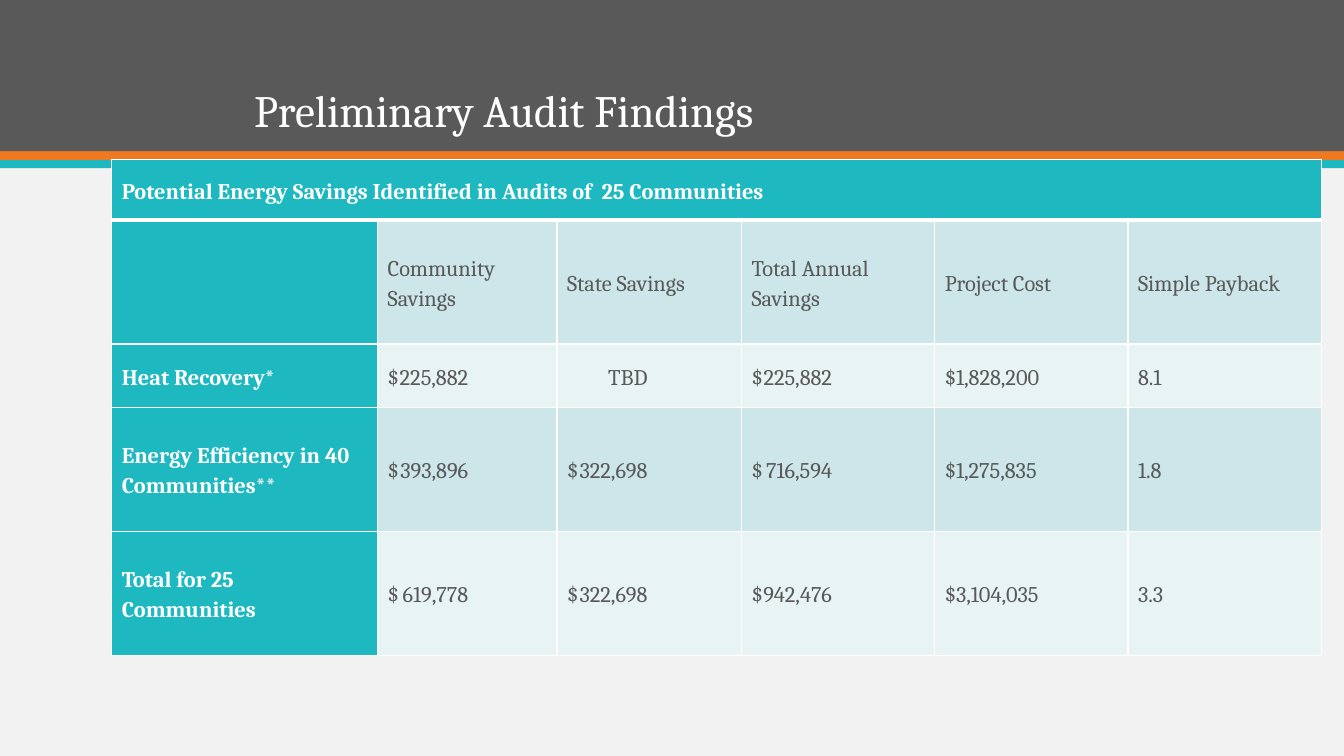
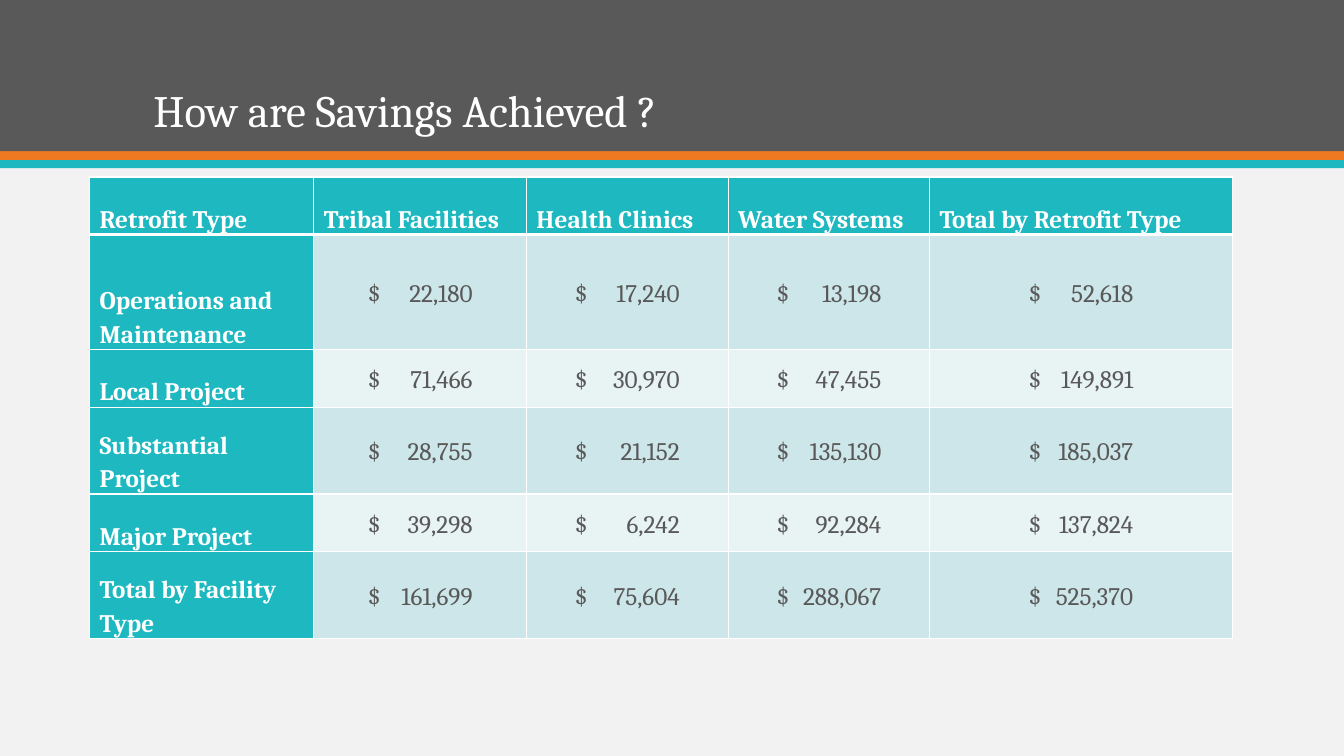
"""Build two slides with tables of energy audit savings."""
import lxml.etree
import pptx
import pptx.dml.color
import pptx.enum.shapes
import pptx.enum.text
import pptx.oxml.ns
import pptx.util

Cm = pptx.util.Cm
Pt = pptx.util.Pt
qn = pptx.oxml.ns.qn
TOP = pptx.enum.text.MSO_ANCHOR.TOP
MIDDLE = pptx.enum.text.MSO_ANCHOR.MIDDLE
BOTTOM = pptx.enum.text.MSO_ANCHOR.BOTTOM
LEFT = pptx.enum.text.PP_ALIGN.LEFT

WHITE, PAPER, GREY = "FFFFFF", "F2F2F2", "595959"
ORANGE, TEAL = "EF7920", "1EB8C1"
STRIPES = ["E8F3F4", "CDE6E9"]
CELL_MARGINS = {"margin_left": Cm(0.25), "margin_right": Cm(0.25), "margin_top": 0, "margin_bottom": 0}


def paint(fill, colour):
    fill.solid()
    fill.fore_color.rgb = pptx.dml.color.RGBColor.from_string(colour)


def apply(target, values):
    for name, value in values.items():
        setattr(target, name, value)


BANDS = [(0, 3.81, GREY), (3.81, 0.22, ORANGE), (4.02, 0.22, TEAL)]

SLIDES = [
    {
        "title": "Preliminary Audit Findings",
        "indent": 2.54,
        "place": (2.82, 4.02),
        "columns": [6.7, 4.52, 4.65, 4.87, 4.87, 4.87],
        "heights": [1.53, 3.12, 1.6, 3.12, 3.12],
        "size": 16,
        "label_anchor": MIDDLE,
        "merge_header": True,
        "dollar": "$\t",
        "tabs": [(0, 2.03, "r")],
        "rows": [
            ["Potential Energy Savings Identified in Audits of  25 Communities", "", "", "", "", ""],
            ["", "Community Savings", "State Savings", "Total Annual Savings", "Project Cost", "Simple Payback"],
            ["Heat Recovery*", "$225,882", "\tTBD", "$225,882", "$1,828,200", "8.1"],
            ["Energy Efficiency in 40 Communities**", "$393,896", "$322,698", "$716,594", "$1,275,835", "1.8"],
            ["Total for 25 Communities", "$619,778", "$322,698", "$942,476", "$3,104,035", "3.3"],
        ],
    },
    {
        "title": "How are Savings Achieved ?",
        "indent": 0,
        "place": (2.26, 4.46),
        "columns": [5.65, 5.36, 5.08, 5.08, 7.62],
        "heights": [1.45, 2.9, 1.45, 2.19, 1.45, 2.19],
        "size": 18,
        "label_anchor": BOTTOM,
        "merge_header": False,
        "dollar": "\t$\t",
        "tabs": [(0.5, -1.57, "l"), (0.5, 1.07, "r")],
        "rows": [
            ["Retrofit Type", "Tribal Facilities", "Health Clinics", "Water Systems", "Total by Retrofit Type"],
            ["Operations and Maintenance", "$22,180", "$17,240", "$13,198", "$52,618"],
            ["Local Project", "$71,466", "$30,970", "$47,455", "$149,891"],
            ["Substantial Project", "$28,755", "$21,152", "$135,130", "$185,037"],
            ["Major Project", "$39,298", "$6,242", "$92,284", "$137,824"],
            ["Total by Facility Type", "$161,699", "$75,604", "$288,067", "$525,370"],
        ],
    },
]

deck = pptx.Presentation()
apply(deck, {"slide_width": Cm(33.87), "slide_height": Cm(19.05)})
paint(deck.slide_master.background.fill, PAPER)

layout = deck.slide_layouts.get_by_name("Title Only")
layout_title = layout.placeholders[0]
apply(layout_title, {"left": Cm(3.61), "top": Cm(0.71), "width": Cm(26.67), "height": Cm(2.87)})
layout_title.text_frame.vertical_anchor = BOTTOM

pages = [deck.slides.add_slide(layout) for slide in SLIDES]

for top, height, colour in BANDS:
    band = pages[0].shapes.add_shape(
        pptx.enum.shapes.MSO_SHAPE.RECTANGLE, 0, Cm(top), deck.slide_width, Cm(height))
    band.shadow.inherit = False
    paint(band.fill, colour)
    band.line.fill.background()
    layout.shapes._spTree.insert(2, band._element)

for page, slide in zip(pages, SLIDES):
    title = page.shapes.title
    title.text_frame.text = slide["title"]
    para = title.text_frame.paragraphs[0]
    apply(para, {"alignment": LEFT, "line_spacing": 0.9})
    para._p.get_or_add_pPr().set("marL", str(Cm(slide["indent"])))
    apply(para.runs[0].font, {"name": "Cambria", "size": Pt(32)})
    paint(para.runs[0].font.fill, WHITE)

    left, top = slide["place"]
    columns, heights = slide["columns"], slide["heights"]
    table = page.shapes.add_table(
        len(heights), len(columns), Cm(left), Cm(top), Cm(sum(columns)), Cm(sum(heights))).table
    for column, width in zip(table.columns, columns):
        column.width = Cm(width)
    for row, height in zip(table.rows, heights):
        row.height = Cm(height)
    if slide["merge_header"]:
        table.cell(0, 0).merge(table.cell(0, len(columns) - 1))

    for r, texts in enumerate(slide["rows"]):
        for c, text in enumerate(texts):
            cell = table.cell(r, c)
            is_label = r == 0 or c == 0
            apply(cell, CELL_MARGINS)
            cell.vertical_anchor = slide["label_anchor"] if is_label else MIDDLE

            borders = {"lnL": 1, "lnR": 1, "lnT": 3 if r == 1 else 1, "lnB": 3 if r == 0 else 1}
            for side, weight in borders.items():
                line = lxml.etree.SubElement(
                    cell._tc.get_or_add_tcPr(), qn("a:" + side), w=str(Pt(weight)))
                solid = lxml.etree.SubElement(line, qn("a:solidFill"))
                lxml.etree.SubElement(solid, qn("a:srgbClr"), val=WHITE)
            paint(cell.fill, TEAL if is_label else STRIPES[r % 2])

            if not text:
                continue
            para = cell.text_frame.paragraphs[0]
            span = para.add_run()
            span.text = text.replace("$", slide["dollar"])
            apply(para, {"alignment": LEFT, "line_spacing": 1.15})
            if "\t" in span.text:
                stops = lxml.etree.SubElement(para._p.get_or_add_pPr(), qn("a:tabLst"))
                for share, offset, align in slide["tabs"]:
                    position = Cm(share * columns[c] + offset)
                    lxml.etree.SubElement(stops, qn("a:tab"), pos=str(position), algn=align)
            apply(span.font, {"name": "Cambria", "size": Pt(slide["size"]), "bold": is_label})
            paint(span.font.fill, WHITE if is_label else GREY)

deck.save("out.pptx")
